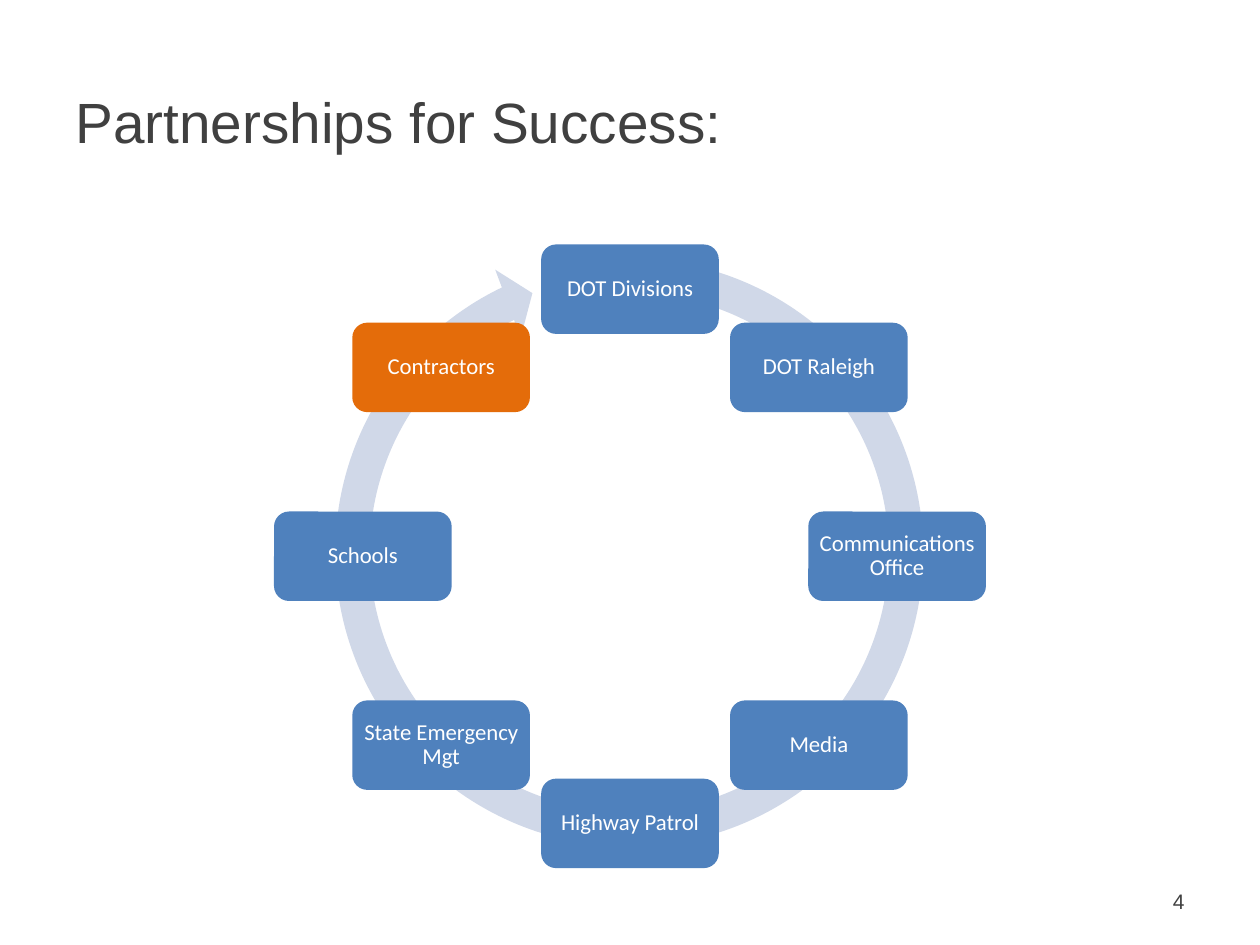
import math

import pptx
import pptx.dml.color
import pptx.enum.shapes
import pptx.enum.text
import pptx.util

Inches, Pt = pptx.util.Inches, pptx.util.Pt
RGBColor = pptx.dml.color.RGBColor
MSO_SHAPE = pptx.enum.shapes.MSO_SHAPE
PP_ALIGN = pptx.enum.text.PP_ALIGN
MSO_ANCHOR = pptx.enum.text.MSO_ANCHOR

BLUE = RGBColor(0x4F, 0x81, 0xBD)
ORANGE = RGBColor(0xE4, 0x6C, 0x0A)
PALE_BLUE = RGBColor(0xD0, 0xD8, 0xE8)
DARK_GRAY = RGBColor(0x40, 0x40, 0x40)
WHITE = RGBColor(0xFF, 0xFF, 0xFF)

# Partners clockwise from the top of the ring
PARTNERS = [
    ("DOT Divisions", BLUE),
    ("DOT Raleigh", BLUE),
    ("Communications Office", BLUE),
    ("Media", BLUE),
    ("Highway Patrol", BLUE),
    ("State Emergency Mgt", BLUE),
    ("Schools", BLUE),
    ("Contractors", ORANGE),
]
CENTER_X, CENTER_Y, RADIUS = 5, 4.415, 2.12
BOX_W, BOX_H = 1.41, 0.71


def write(tf, text, font, size, color, align):
    tf.word_wrap = True
    p = tf.paragraphs[0]
    p.alignment = align
    r = p.add_run()
    r.text = text
    r.font.name = font
    r.font.size = Pt(size)
    r.font.color.rgb = color
    return p


def add_filled(kind, left, top, width, height, color):
    s = slide.shapes.add_shape(kind, Inches(left), Inches(top), Inches(width), Inches(height))
    s.shadow.inherit = False
    s.fill.solid()
    s.fill.fore_color.rgb = color
    s.line.fill.background()
    return s


prs = pptx.Presentation()
prs.slide_width, prs.slide_height = Inches(10), Inches(7.5)
slide = prs.slides.add_slide(prs.slide_layouts[5])

# Title
title = slide.shapes.title
title.left, title.top = Inches(0.5), Inches(0.61)
title.width, title.height = Inches(9), Inches(1.25)
tf = title.text_frame
tf.auto_size = pptx.enum.text.MSO_AUTO_SIZE.NONE
tf.vertical_anchor = MSO_ANCHOR.TOP
tf.margin_top = Inches(0.08)
write(tf, "Partnerships for Success:", "Arial", 32.4, DARK_GRAY, PP_ALIGN.LEFT)

# Ring of partners
ring = add_filled(MSO_SHAPE.CIRCULAR_ARROW, 2.51, 1.9, 4.97, 4.97, PALE_BLUE)
for i, value in enumerate([5.5 / 100, 3.31, 146.4, 168.8, 5.8 / 100]):
    ring.adjustments[i] = value

for i, (name, color) in enumerate(PARTNERS):
    angle = 2 * math.pi * i / len(PARTNERS)
    x = CENTER_X + RADIUS * math.sin(angle)
    y = CENTER_Y - RADIUS * math.cos(angle)
    s = add_filled(MSO_SHAPE.ROUNDED_RECTANGLE,
                   x - BOX_W / 2, y - BOX_H / 2, BOX_W, BOX_H, color)
    tf = s.text_frame
    tf.margin_left = tf.margin_right = Inches(0.05)
    tf.margin_top = tf.margin_bottom = Inches(0.05)
    tf.vertical_anchor = MSO_ANCHOR.MIDDLE
    p = write(tf, name, "Calibri", 13, WHITE, PP_ALIGN.CENTER)
    p.line_spacing = 0.9

# Slide number
number = slide.shapes.add_textbox(Inches(7.17), Inches(6.95), Inches(2.33), Inches(0.4))
number.text_frame.vertical_anchor = MSO_ANCHOR.MIDDLE
write(number.text_frame, "4", "Arial", 12, DARK_GRAY, PP_ALIGN.RIGHT)

prs.save("out.pptx")
